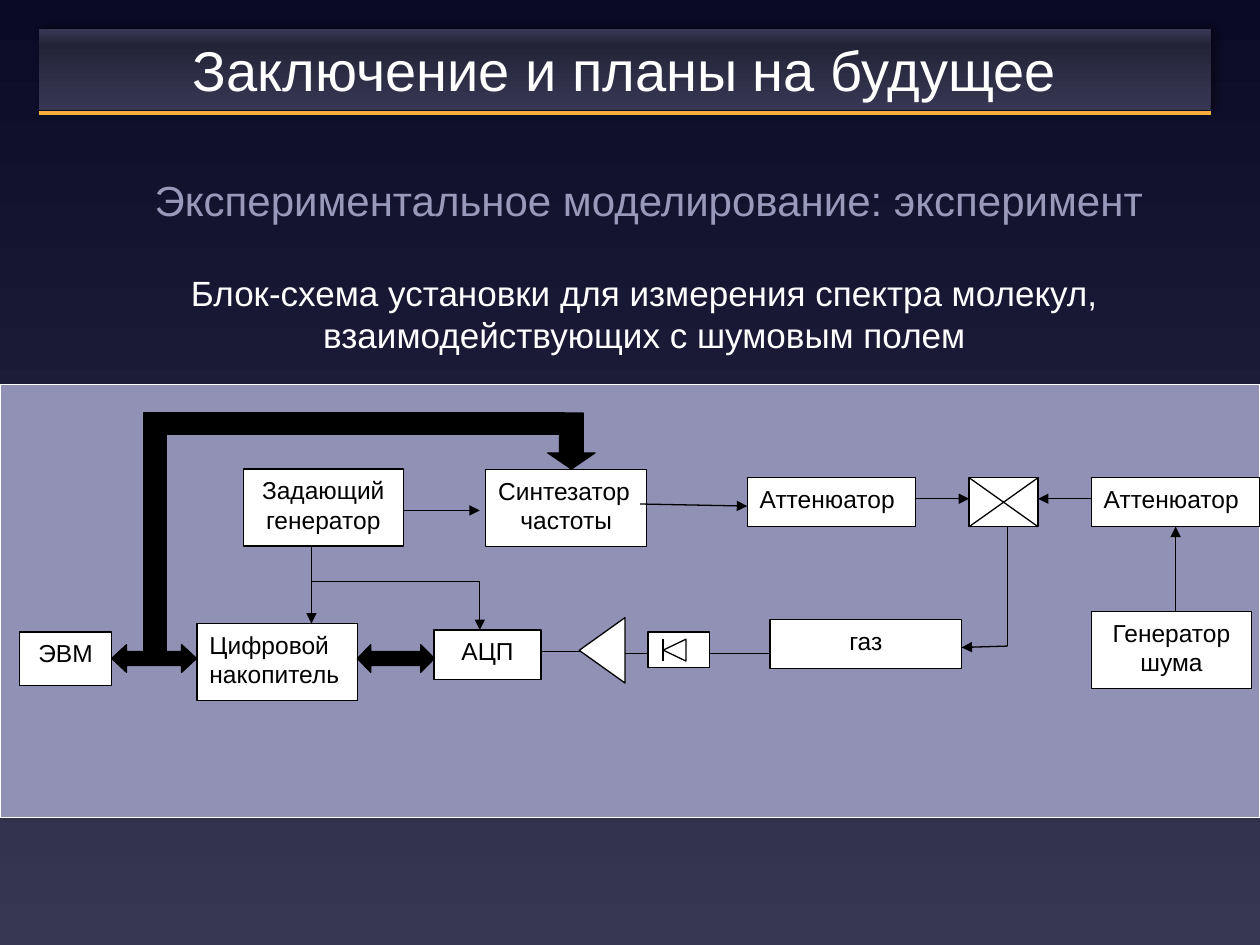
from copy import deepcopy
from itertools import pairwise

from lxml.etree import SubElement
from pptx import Presentation
from pptx.dml.color import RGBColor
from pptx.enum.shapes import MSO_CONNECTOR, MSO_SHAPE as SHAPE
from pptx.enum.text import MSO_ANCHOR as ANCHOR, PP_ALIGN as ALIGN
from pptx.oxml.ns import qn
from pptx.util import Pt

WHITE = RGBColor(0xFF, 0xFF, 0xFF)
BLACK = RGBColor(0, 0, 0)
SLATE = RGBColor(0x37, 0x37, 0x54)
NIGHT = RGBColor(0x0B, 0x0A, 0x25)
CHARCOAL = RGBColor(0x24, 0x24, 0x38)
LAVENDER = RGBColor(0x91, 0x91, 0xB6)
LILAC = RGBColor(0x99, 0x99, 0xBB)
ORANGE = RGBColor(0xF9, 0xAE, 0x3B)

TITLE = "Заключение и планы на будущее"
SUBTITLE = ["Экспериментальное моделирование: эксперимент"]
CAPTION = ["Блок-схема установки для измерения спектра молекул, ",
           "взаимодействующих с шумовым полем"]

LEFT, CENTER = ALIGN.LEFT, ALIGN.CENTER
BLOCKS = [
    ((139, 268, 91.5, 44), [("Задающий генератор", CENTER)]),
    ((277.6, 268.4, 92, 44), [("Синтезатор", LEFT), ("частоты", CENTER)]),
    ((427, 273, 96.3, 28), [("Аттенюатор", LEFT)]),
    ((623.6, 273, 96.3, 28), [("Аттенюатор", LEFT)]),
    ((623.6, 349.4, 91.7, 44), [("Генератор", CENTER), ("шума", CENTER)]),
    ((440, 354, 109.5, 28), [("газ", CENTER)]),
    ((248, 360, 61.2, 28.3), [("АЦП", CENTER)]),
    ((112.6, 356.3, 91.7, 44), [("Цифровой", LEFT), ("накопитель", LEFT)]),
    ((11.2, 361.2, 52.6, 30.4), [("ЭВМ", CENTER)]),
]
MIXER = (553.8, 273, 39.4, 28)
DETECTOR = (370.3, 361.2, 35.2, 20.2)
AMPLIFIER = (325.4, 358.5, 37.4, 26.2)
DIODE = (379.2, 365, 12.5, 13)
DATA_BUSES = [
    (SHAPE.LEFT_RIGHT_ARROW, (204.2, 368.4, 44, 15.8), 0.49),
    (SHAPE.LEFT_RIGHT_ARROW, (63.8, 368.4, 48.5, 15.8), 0.54),
    (SHAPE.RECTANGLE, (82.2, 236, 12.8, 136), None),
    (SHAPE.RECTANGLE, (95, 236, 227.5, 12.2), None),
    (SHAPE.DOWN_ARROW, (313, 236, 27, 32), 0.34),
]
ARROWS = [
    [(230.2, 291.7), (274.2, 291.7)],
    [(365.8, 288), (427, 289.2)],
    [(523.4, 285), (553.8, 285)],
    [(623.6, 285), (593.2, 285)],
    [(575.8, 301), (575.8, 369.2), (549.5, 370)],
    [(178, 312.2), (178, 356.3)],
    [(178, 332.2), (274.2, 332.2), (274.2, 360)],
    [(671.8, 349.4), (671.8, 301)],
]
WIRES = [
    [(370.3, 373.4), (357.2, 373.4)],
    [(331.2, 372.3), (309.2, 372.3)],
    [(405.5, 373.4), (440, 373.4)],
    [(378.8, 365), (378.8, 377.5)],
]

prs = Presentation()
prs.slide_width, prs.slide_height = Pt(720), Pt(540)
slide = prs.slides.add_slide(prs.slide_layouts[6])


def write(frame, lines, size, color):
    for index, (text, align) in enumerate(lines):
        paragraph = frame.paragraphs[0] if index == 0 else frame.add_paragraph()
        paragraph.text = text
        paragraph.alignment = align
        paragraph.font.size = Pt(size)
        paragraph.font.name = "Arial"
        paragraph.font.color.rgb = color


def add_figure(kind, bounds, fill=WHITE, line=BLACK, turn=0):
    figure = slide.shapes.add_shape(kind, *map(Pt, bounds))
    figure.shadow.inherit = False
    figure.fill.solid()
    figure.fill.fore_color.rgb = fill
    figure.line.color.rgb = line
    figure.line.width = Pt(0.75)
    figure.rotation = turn
    return figure


def add_heading(bounds, lines, size, color):
    frame = slide.shapes.add_textbox(*map(Pt, bounds)).text_frame
    frame.word_wrap = False
    frame.vertical_anchor = ANCHOR.MIDDLE
    write(frame, [(text, CENTER) for text in lines], size, color)


def add_line(start, end, color=BLACK, width=0.75, arrow=False):
    line = slide.shapes.add_connector(MSO_CONNECTOR.STRAIGHT, *map(Pt, start + end))
    line.line.color.rgb = color
    line.line.width = Pt(width)
    properties = line._element.spPr
    if arrow:
        SubElement(properties.find(qn("a:ln")), qn("a:tailEnd"), type="triangle")
    SubElement(properties, qn("a:effectLst"))


def add_route(points, arrow):
    segments = list(pairwise(points))
    for segment in segments:
        add_line(*segment, arrow=arrow and segment == segments[-1])


def shade(fill, lower, upper):
    fill.gradient()
    fill.gradient_angle = 90
    for stop, color in zip(fill.gradient_stops, (lower, upper)):
        stop.color.rgb = color


def add_title():
    bar = add_figure(SHAPE.RECTANGLE, (22.4, 16.6, 669.4, 46.3))
    bar.line.fill.background()
    shade(bar.fill, SLATE, CHARCOAL)
    properties = bar._element.spPr
    stops = properties.find(".//" + qn("a:gsLst"))
    stops[1].set("pos", "80000")
    top_stop = deepcopy(stops[0])
    top_stop.set("pos", "100000")
    stops.append(top_stop)
    shadow = SubElement(properties.find(qn("a:effectLst")), qn("a:outerShdw"),
                        blurRad=str(Pt(4)), dist=str(Pt(3)), dir="18900000")
    tint = SubElement(shadow, qn("a:srgbClr"), val=str(BLACK))
    SubElement(tint, qn("a:alpha"), val="40000")
    bar.text_frame.word_wrap = True
    bar.text_frame.vertical_anchor = ANCHOR.TOP
    write(bar.text_frame, [(TITLE, CENTER)], 32, WHITE)
    add_line((22.4, 64.6), (691.8, 64.6), ORANGE, 2.5)


shade(slide.background.fill, SLATE, NIGHT)
add_figure(SHAPE.RECTANGLE, (0, 219.6, 720, 247.4), LAVENDER, WHITE)
add_heading((99.4, 151.4, 537.8, 55.4), CAPTION, 20, WHITE)
add_heading((78.5, 96, 584.6, 36), SUBTITLE, 24, LILAC)

for bounds, lines in BLOCKS:
    block = add_figure(SHAPE.RECTANGLE, bounds)
    block.text_frame.word_wrap = True
    block.text_frame.vertical_anchor = ANCHOR.TOP
    write(block.text_frame, lines, 14, BLACK)

add_figure(SHAPE.RECTANGLE, MIXER)
left, top, width, height = MIXER
add_line((left, top), (left + width, top + height))
add_line((left + width, top), (left, top + height))

add_figure(SHAPE.RECTANGLE, DETECTOR)
for bounds in (AMPLIFIER, DIODE):
    add_figure(SHAPE.ISOSCELES_TRIANGLE, bounds, turn=270)

for kind, bounds, head in DATA_BUSES:
    bus = add_figure(kind, bounds, BLACK)
    if head:
        bus.adjustments[1] = head

for points in ARROWS:
    add_route(points, True)
for points in WIRES:
    add_route(points, False)

add_title()
prs.save("out.pptx")
